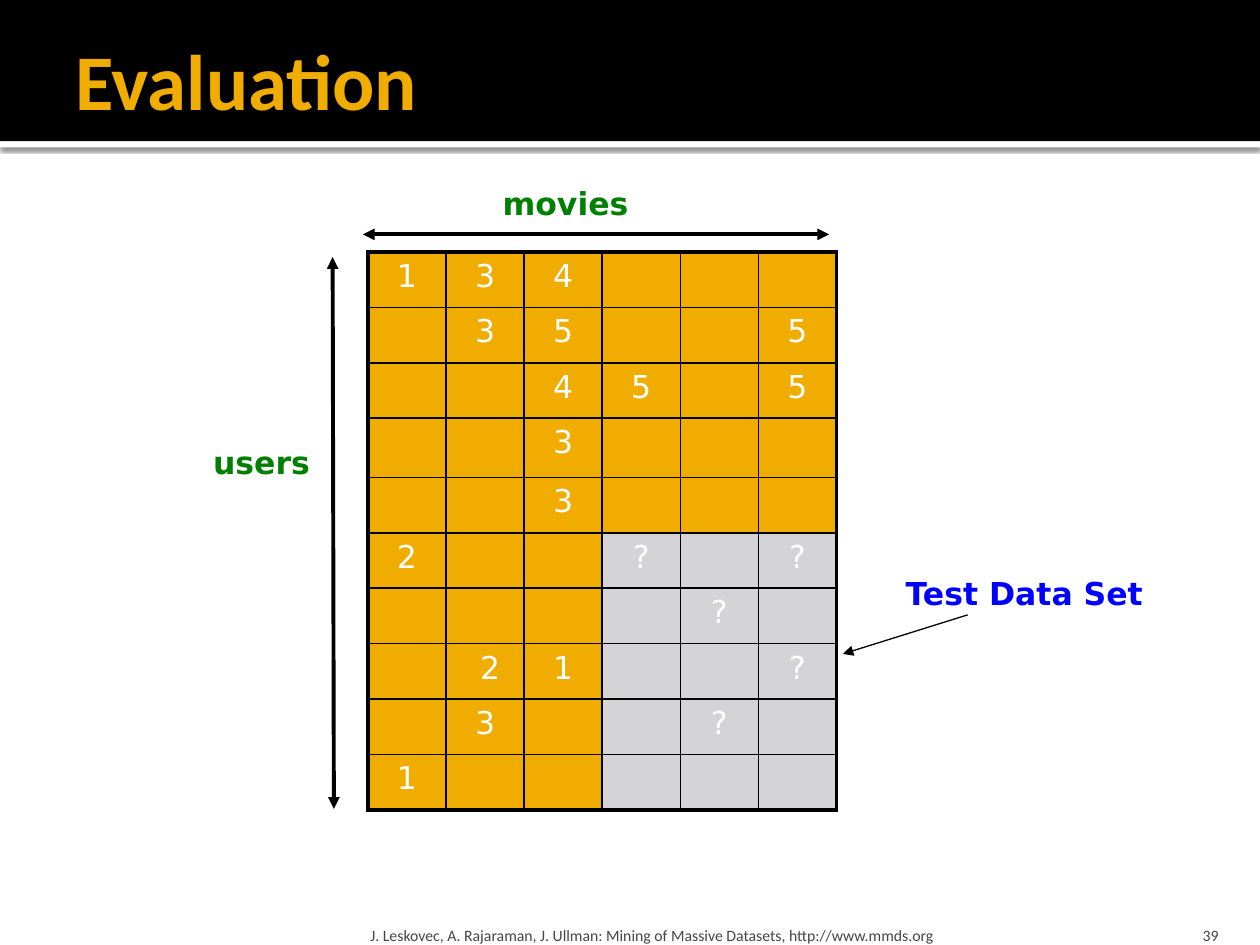
from lxml.etree import SubElement
from pptx import Presentation
from pptx.dml.color import RGBColor
from pptx.enum.shapes import MSO_CONNECTOR, MSO_SHAPE
from pptx.enum.text import MSO_ANCHOR as Anchor, PP_ALIGN as Align
from pptx.oxml.ns import qn
from pptx.util import Inches, Pt

COLORS = {
    "black": "000000", "white": "FFFFFF", "gold": "F0AD00", "gray": "D4D4D6",
    "green": "008000", "blue": "0000FF", "footer": "454545",
}
BODY, HEADING = "DejaVu Sans", "Calibri"
MARGINS = (0.1, 0.05, 0.1, 0.05)

RATINGS = [
    ["1", "3", "4", "", "", ""],
    ["", "3", "5", "", "", "5"],
    ["", "", "4", "5", "", "5"],
    ["", "", "3", "", "", ""],
    ["", "", "3", "", "", ""],
    ["2", "", "", "?", "", "?"],
    ["", "", "", "", "?", ""],
    ["", " 2", "1", "", "", "?"],
    ["", "3", "", "", "?", ""],
    ["1", "", "", "", "", ""],
]
TABLE_LEFT, TABLE_TOP, COLUMN_WIDTH, ROW_HEIGHT = 2.92, 2, 0.62, 0.44
TALL_ROW, TALL_HEIGHT = 3, 0.47
TEST_ROW, TEST_COLUMN = 5, 3
OUTER_BORDER, INNER_BORDER = 2.25, 1

LABELS = [
    ("Test Data Set", (7.09, 4.51, 2.1, 0.4), "blue", Align.LEFT, False),
    ("users", (1.1, 3.47, 1.95, 0.4), "green", Align.CENTER, True),
    ("movies", (3.89, 1.41, 1.21, 0.4), "green", Align.LEFT, False),
]
ARROWS = [
    ((2.64, 2.04), (2.65, 6.42), 2.25, ("headEnd", "tailEnd")),
    ((2.88, 1.86), (6.58, 1.86), 2.25, ("headEnd", "tailEnd")),
    ((7.68, 4.88), (6.69, 5.19), 0.75, ("tailEnd",)),
]
FOOTERS = [
    ("J. Leskovec, A. Rajaraman, J. Ullman: Mining of Massive Datasets, http://www.mmds.org",
     (2.89, 7.2, 6.02, 0.3), Align.LEFT, (0.05, 0.05, 0.05, 0)),
    ("39", (8.97, 7.2, 0.8, 0.3), Align.RIGHT, (0.1, 0.05, 0.1, 0)),
]


def color(name):
    return RGBColor.from_string(COLORS[name])


def add_run(paragraph, text, font, size, color_name, bold=False):
    run = paragraph.add_run()
    run.text = text
    run.font.name, run.font.size, run.font.bold = font, Pt(size), bold
    run.font.color.rgb = color(color_name)


def add_text(slide, text, box, font, size, color_name, bold=False, align=Align.LEFT,
             anchor=Anchor.TOP, margins=MARGINS, wrap=True):
    frame = slide.shapes.add_textbox(*map(Inches, box)).text_frame
    frame.word_wrap, frame.vertical_anchor = wrap, anchor
    (frame.margin_left, frame.margin_top,
     frame.margin_right, frame.margin_bottom) = map(Inches, margins)
    paragraph = frame.paragraphs[0]
    paragraph.alignment = align
    add_run(paragraph, text, font, size, color_name, bold)


def add_band(slide, box, color_name):
    band = slide.shapes.add_shape(MSO_SHAPE.RECTANGLE, *map(Inches, box))
    band.shadow.inherit = False
    band.fill.solid()
    band.fill.fore_color.rgb = color(color_name)
    band.line.fill.background()
    return band


def add_drop_shadow(shape):
    effects = shape._element.spPr.find(qn("a:effectLst"))
    shadow = SubElement(effects, qn("a:outerShdw"), blurRad=str(Pt(2.5)), dist=str(Pt(0.8)),
                        dir="5400000", algn="tl", rotWithShape="0")
    shade = SubElement(shadow, qn("a:srgbClr"), val=COLORS["black"])
    SubElement(shade, qn("a:alpha"), val="60000")


def add_arrow(slide, start, end, width, tips):
    arrow = slide.shapes.add_connector(MSO_CONNECTOR.STRAIGHT, *map(Inches, start + end))
    arrow.line.color.rgb = color("black")
    arrow.line.width = Pt(width)
    for tip in tips:
        SubElement(arrow.line._get_or_add_ln(), qn(f"a:{tip}"), type="triangle")
    SubElement(arrow._element.spPr, qn("a:effectLst"))


def set_borders(cell, outer_sides):
    properties = cell._tc.get_or_add_tcPr()
    for side, is_outer in outer_sides.items():
        width = OUTER_BORDER if is_outer else INNER_BORDER
        border = SubElement(properties, qn(f"a:ln{side}"), w=str(Pt(width)))
        fill = SubElement(border, qn("a:solidFill"))
        SubElement(fill, qn("a:srgbClr"), val=COLORS["black"])


def add_ratings(slide):
    row_count, column_count = len(RATINGS), len(RATINGS[0])
    table = slide.shapes.add_table(
        row_count, column_count, Inches(TABLE_LEFT), Inches(TABLE_TOP),
        Inches(column_count * COLUMN_WIDTH), Inches(row_count * ROW_HEIGHT)).table
    table.first_row = table.horz_banding = False
    for column in table.columns:
        column.width = Inches(COLUMN_WIDTH)
    for r, ratings in enumerate(RATINGS):
        table.rows[r].height = Inches(TALL_HEIGHT if r == TALL_ROW else ROW_HEIGHT)
        for c, rating in enumerate(ratings):
            cell = table.cell(r, c)
            set_borders(cell, {"L": c == 0, "R": c == column_count - 1,
                               "T": r == 0, "B": r == row_count - 1})
            is_test = r >= TEST_ROW and c >= TEST_COLUMN
            cell.fill.solid()
            cell.fill.fore_color.rgb = color("gray" if is_test else "gold")
            paragraph = cell.text_frame.paragraphs[0]
            paragraph.alignment = Align.CENTER
            if rating:
                add_run(paragraph, rating, BODY, 18, "white")


def main():
    """Build the Evaluation slide with its ratings matrix."""
    presentation = Presentation()
    presentation.slide_width, presentation.slide_height = Inches(10), Inches(7.5)
    slide = presentation.slides.add_slide(presentation.slide_layouts[6])

    add_drop_shadow(add_band(slide, (0, 1.12, 10, 0.05), "white"))
    add_band(slide, (0, 0, 10, 1.12), "black")
    add_text(slide, "Evaluation", (0.5, 0.17, 9, 0.92), HEADING, 45, "gold", True,
             anchor=Anchor.MIDDLE, margins=(0.1, 0.05, 0.05, 0.05))
    add_ratings(slide)
    for text, box, color_name, align, wrap in LABELS:
        add_text(slide, text, box, BODY, 18, color_name, True, align, wrap=wrap)
    for arrow in ARROWS:
        add_arrow(slide, *arrow)
    for text, box, align, margins in FOOTERS:
        add_text(slide, text, box, HEADING, 9, "footer", align=align,
                 anchor=Anchor.BOTTOM, margins=margins)
    presentation.save("out.pptx")


if __name__ == "__main__":
    main()
